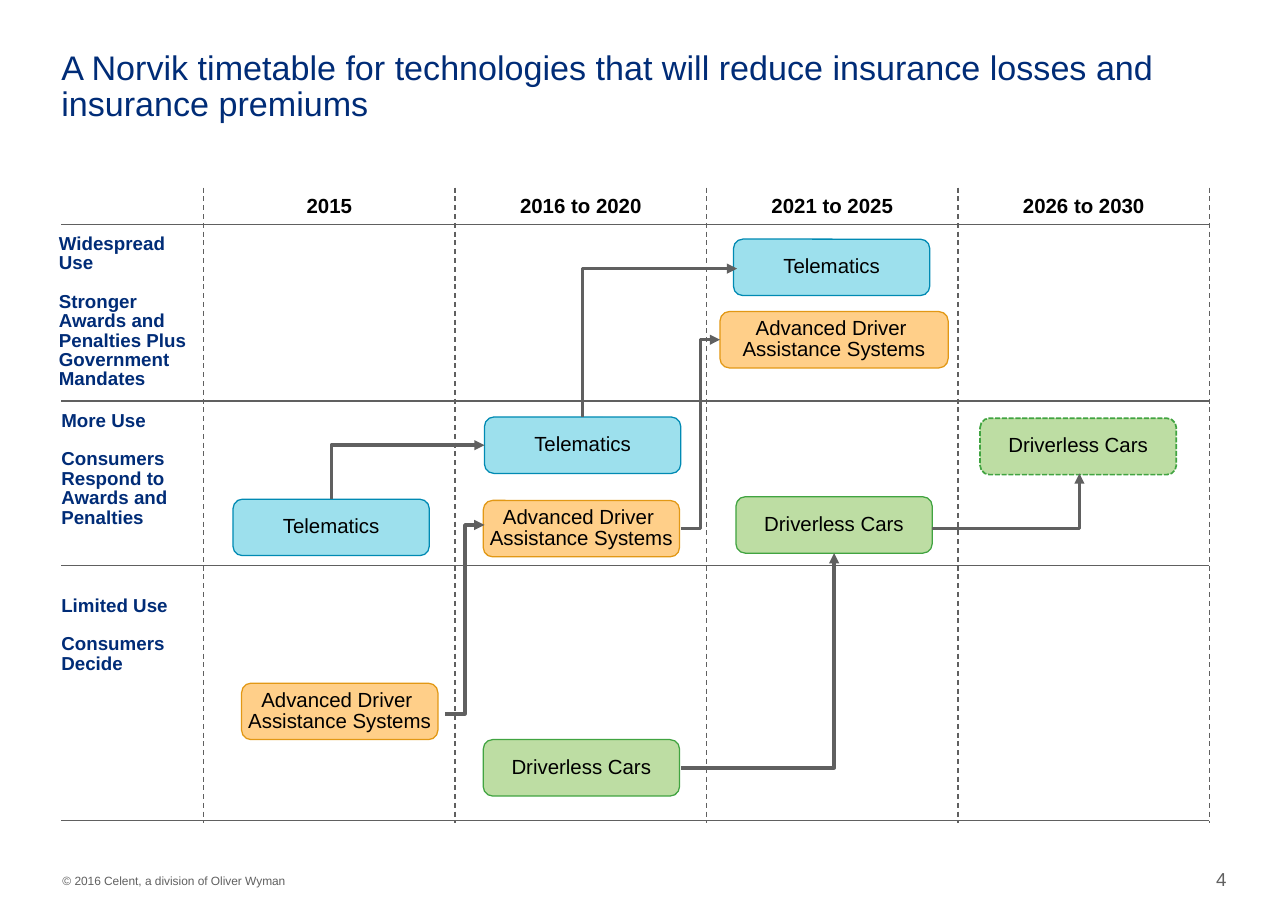
from dataclasses import dataclass

import pptx
import pptx.dml.color
import pptx.enum.dml
import pptx.enum.shapes
import pptx.enum.text
import pptx.oxml
import pptx.oxml.ns
import pptx.util

Inches = pptx.util.Inches
Pt = pptx.util.Pt
RGBColor = pptx.dml.color.RGBColor
ALIGN = pptx.enum.text.PP_ALIGN
ANCHOR = pptx.enum.text.MSO_ANCHOR
DASH = pptx.enum.dml.MSO_LINE
CONNECTOR = pptx.enum.shapes.MSO_CONNECTOR
ROUNDED = pptx.enum.shapes.MSO_SHAPE.ROUNDED_RECTANGLE

NAVY = RGBColor(0x00, 0x2C, 0x77)
GRAY = RGBColor(0x60, 0x60, 0x60)
BLACK = RGBColor(0x00, 0x00, 0x00)
BLUE_FILL = RGBColor(0x9D, 0xE0, 0xED)
BLUE_LINE = RGBColor(0x00, 0x8A, 0xB3)
ORANGE_FILL = RGBColor(0xFF, 0xCF, 0x89)
ORANGE_LINE = RGBColor(0xE2, 0x98, 0x15)
GREEN_FILL = RGBColor(0xBD, 0xDD, 0xA3)
GREEN_LINE = RGBColor(0x41, 0xA4, 0x41)

GRID_LEFT, GRID_RIGHT = 0.5, 9.86
GRID_TOP, GRID_BOTTOM = 1.53, 6.71
FIRST_COLUMN, COLUMN_WIDTH = 1.66, 2.05
ROW_LINES = [1.83, 3.27, 4.61, 6.69]
PERIODS = ["2015", "2016 to 2020", "2021 to 2025", "2026 to 2030"]


@dataclass
class Technology:
    lines: list[str]
    fill: RGBColor
    line: RGBColor


@dataclass
class Stage:
    technology: Technology
    left: float
    top: float
    width: float = 1.6
    dashed: bool = False


@dataclass
class RowLabel:
    left: float
    top: float
    height: float
    lines: list[str]


@dataclass
class Arrow:
    x1: float
    y1: float
    x2: float
    y2: float
    preset: str = "bentConnector2"
    rises_first: bool = False


TELEMATICS = Technology(["Telematics"], BLUE_FILL, BLUE_LINE)
ASSISTANCE = Technology(["Advanced Driver ", "Assistance Systems"], ORANGE_FILL, ORANGE_LINE)
DRIVERLESS = Technology(["Driverless Cars"], GREEN_FILL, GREEN_LINE)

STAGES = [
    Stage(TELEMATICS, 1.9, 4.07),
    Stage(TELEMATICS, 3.95, 3.4),
    Stage(TELEMATICS, 5.98, 1.95),
    Stage(ASSISTANCE, 1.97, 5.57),
    Stage(ASSISTANCE, 3.94, 4.08),
    Stage(ASSISTANCE, 5.87, 2.54, width=1.86),
    Stage(DRIVERLESS, 3.94, 6.03),
    Stage(DRIVERLESS, 6, 4.05),
    Stage(DRIVERLESS, 7.99, 3.41, dashed=True),
]
ROW_LABELS = [
    RowLabel(0.48, 1.91, 1.27, ["Widespread Use",
             "Stronger Awards and Penalties Plus Government Mandates"]),
    RowLabel(0.5, 3.35, 0.96, ["More Use", "Consumers Respond to Awards and Penalties"]),
    RowLabel(0.5, 4.86, 0.64, ["Limited Use", "Consumers Decide"]),
]
ARROWS = [
    Arrow(2.7, 4.07, 3.95, 3.63, rises_first=True),
    Arrow(4.75, 3.4, 6.01, 2.19, rises_first=True),
    Arrow(5.55, 6.26, 6.8, 4.51),
    Arrow(7.6, 4.31, 8.8, 3.86),
    Arrow(3.63, 5.82, 3.95, 4.28, "bentConnector3"),
    Arrow(5.55, 4.31, 5.87, 2.77, "bentConnector3"),
]


def write(tf, lines: list[str], size: float, color: RGBColor, bold: bool = False,
          align=ALIGN.LEFT, spacing: float = 1.0, gap: float = 0) -> None:
    for i, line in enumerate(lines):
        p = tf.paragraphs[0] if i == 0 else tf.add_paragraph()
        p.alignment = align
        p.line_spacing = spacing
        if i and gap:
            p.space_before = Pt(gap)
        r = p.add_run()
        r.text = line
        r.font.name = "Arial"
        r.font.size = Pt(size)
        r.font.bold = bold
        r.font.color.rgb = color


def add_text(s, left: float, top: float, width: float, height: float, lines: list[str],
             size: float, color: RGBColor, anchor=ANCHOR.MIDDLE, **style) -> None:
    tf = s.shapes.add_textbox(Inches(left), Inches(top), Inches(width), Inches(height)).text_frame
    tf.word_wrap = True
    tf.vertical_anchor = anchor
    tf.margin_left = tf.margin_right = tf.margin_top = tf.margin_bottom = 0
    write(tf, lines, size, color, **style)


def add_line(s, kind, x1: float, y1: float, x2: float, y2: float, weight: float = 0.75):
    sp = s.shapes.add_connector(kind, Inches(x1), Inches(y1), Inches(x2), Inches(y2))
    sp.line.color.rgb = GRAY
    sp.line.width = Pt(weight)
    pptx.oxml.ns.qn("a:effectLst")
    sp._element.spPr.append(pptx.oxml.parse_xml(
        f'<a:effectLst {pptx.oxml.ns.nsdecls("a")}/>'))
    return sp


def add_arrow(s, arrow: Arrow) -> None:
    x1, y1, x2, y2 = arrow.x1, arrow.y1, arrow.x2, arrow.y2
    if arrow.rises_first:
        cx, cy = (x1 + x2) / 2, (y1 + y2) / 2
        half_w, half_h = (y1 - y2) / 2, (x2 - x1) / 2
        x1, y1, x2, y2 = cx + half_w, cy + half_h, cx - half_w, cy - half_h
    sp = add_line(s, CONNECTOR.ELBOW, x1, y1, x2, y2, 2)
    sp_pr = sp._element.spPr
    sp_pr.find(pptx.oxml.ns.qn("a:prstGeom")).set("prst", arrow.preset)
    if arrow.rises_first:
        sp_pr.find(pptx.oxml.ns.qn("a:xfrm")).set("rot", "5400000")
    sp_pr.find(pptx.oxml.ns.qn("a:ln")).append(pptx.oxml.parse_xml(
        f'<a:tailEnd {pptx.oxml.ns.nsdecls("a")} type="triangle"/>'))


def add_stage(s, stage: Stage) -> None:
    sp = s.shapes.add_shape(ROUNDED, Inches(stage.left), Inches(stage.top),
                            Inches(stage.width), Inches(0.46))
    sp.shadow.inherit = False
    sp.fill.solid()
    sp.fill.fore_color.rgb = stage.technology.fill
    sp.line.color.rgb = stage.technology.line
    sp.line.width = Pt(1 if stage.dashed else 0.75)
    if stage.dashed:
        sp.line.dash_style = DASH.SQUARE_DOT
    tf = sp.text_frame
    tf.word_wrap = False
    tf.vertical_anchor = ANCHOR.MIDDLE
    write(tf, stage.technology.lines, 12, BLACK, align=ALIGN.CENTER, spacing=0.86)


def main() -> None:
    prs = pptx.Presentation()
    prs.slide_width, prs.slide_height = Inches(10.5), Inches(7.5)
    s = prs.slides.add_slide(prs.slide_layouts[6])

    add_text(s, 0.5, 0.42, 9.5, 0.83,
             ["A Norvik timetable for technologies that will reduce insurance losses "
              "and insurance premiums"], 20, NAVY, ANCHOR.TOP, spacing=0.88)
    for i, period in enumerate(PERIODS):
        add_text(s, FIRST_COLUMN + i * COLUMN_WIDTH, 1.54, COLUMN_WIDTH, 0.27, [period],
                 12, BLACK, bold=True, align=ALIGN.CENTER)
    for label in ROW_LABELS:
        add_text(s, label.left, label.top, 1.16, label.height, label.lines, 11, NAVY,
                 bold=True, spacing=0.86, gap=11.4)
    for i in range(len(PERIODS) + 1):
        x = FIRST_COLUMN + i * COLUMN_WIDTH
        add_line(s, CONNECTOR.STRAIGHT, x, GRID_TOP, x, GRID_BOTTOM).line.dash_style = DASH.DASH
    for y in ROW_LINES:
        add_line(s, CONNECTOR.STRAIGHT, GRID_LEFT, y, GRID_RIGHT, y)
    for stage in STAGES:
        add_stage(s, stage)
    for arrow in ARROWS:
        add_arrow(s, arrow)
    add_text(s, 0.51, 7.12, 2.2, 0.12, ["© 2016 Celent, a division of Oliver Wyman"],
             7, GRAY, ANCHOR.BOTTOM)
    add_text(s, 9.34, 7.08, 0.66, 0.18, ["4"], 11, GRAY, ANCHOR.BOTTOM, align=ALIGN.RIGHT)
    prs.save("out.pptx")


if __name__ == "__main__":
    main()
